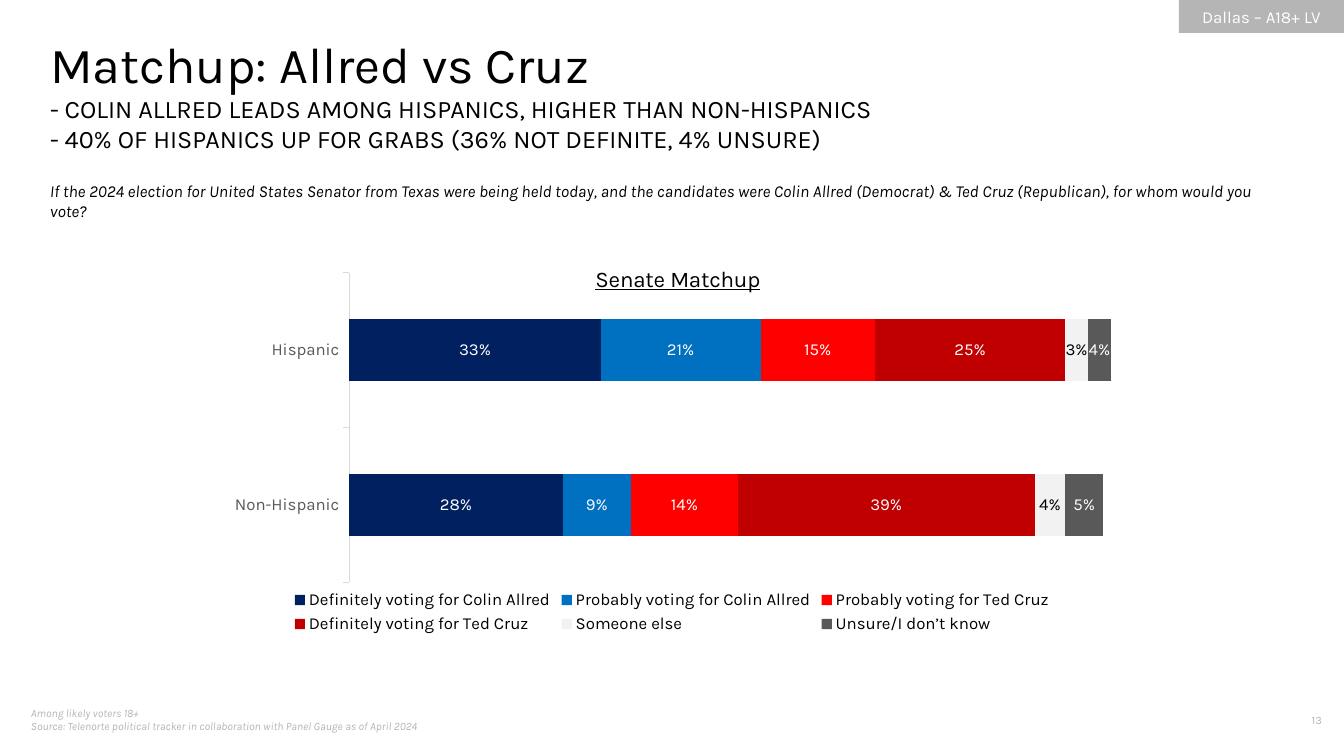
from lxml import etree
from pptx import Presentation
from pptx.chart.data import CategoryChartData
from pptx.dml.color import RGBColor
from pptx.enum.chart import XL_CHART_TYPE, XL_LABEL_POSITION, XL_LEGEND_POSITION, XL_TICK_MARK
from pptx.enum.shapes import MSO_SHAPE
from pptx.enum.text import MSO_ANCHOR, MSO_AUTO_SIZE, PP_ALIGN
from pptx.oxml.ns import qn
from pptx.util import Pt

FONT = "Karla"
BLACK, WHITE, GRAY, DARK = "000000", "FFFFFF", "B5B5B5", "595959"
LEFT, CENTER, RIGHT = PP_ALIGN.LEFT, PP_ALIGN.CENTER, PP_ALIGN.RIGHT
TOP, MIDDLE = MSO_ANCHOR.TOP, MSO_ANCHOR.MIDDLE

GROUPS = ["Hispanic", "Non-Hispanic"]
# answer, share per group, bar colour, label colour
ANSWERS = [
    ("Definitely voting for Colin Allred", (0.33, 0.28), "002060", WHITE),
    ("Probably voting for Colin Allred", (0.21, 0.09), "0070C0", WHITE),
    ("Probably voting for Ted Cruz", (0.15, 0.14), "FF0000", WHITE),
    ("Definitely voting for Ted Cruz", (0.25, 0.39), "C00000", WHITE),
    ("Someone else", (0.03, 0.04), "F2F2F2", BLACK),
    ("Unsure/I don’t know", (0.04, 0.05), DARK, WHITE),
]


def px(n):
    return n * 12192000 // 1344


def rgb(color):
    return RGBColor.from_string(color)


def style(font, size, color, italic=False):
    font.name, font.size, font.italic = FONT, Pt(size), italic
    font.color.rgb = rgb(color)


def write(tf, paragraphs, color, italic=False, align=LEFT, anchor=TOP, inset=None):
    """Fill a frame from (size, lines) pairs, one paragraph each."""
    tf.word_wrap = True
    tf.auto_size = MSO_AUTO_SIZE.NONE
    tf.vertical_anchor = anchor
    if inset is not None:
        tf.margin_left = tf.margin_top = tf.margin_right = tf.margin_bottom = inset
    for i, (size, lines) in enumerate(paragraphs):
        p = tf.add_paragraph() if i else tf.paragraphs[0]
        p.alignment = align
        p.space_before = Pt(0)
        for j, line in enumerate(lines):
            if j:
                p.add_line_break()
            r = p.add_run()
            r.text = line
            style(r.font, size, color, italic)


def add_text(s, box, paragraphs, color, **options):
    tb = s.shapes.add_textbox(*map(px, box))
    write(tb.text_frame, paragraphs, color, **options)


def add_title(s, box, paragraphs):
    title = s.shapes.title
    title.left, title.top, title.width, title.height = map(px, box)
    write(title.text_frame, paragraphs, BLACK, inset=0)


def add_tag(s, box, text):
    sp = s.shapes.add_shape(MSO_SHAPE.RECTANGLE, *map(px, box))
    sp.shadow.inherit = False
    sp.fill.solid()
    sp.fill.fore_color.rgb = rgb(GRAY)
    sp.line.fill.background()
    write(sp.text_frame, [(12, [text])], WHITE, align=CENTER, anchor=MIDDLE)


def place(element, before, **values):
    """Give a chart part a manual layout, in fractions of the chart."""
    for old in element.findall(qn("c:layout")):
        element.remove(old)
    layout = etree.Element(qn("c:layout"))
    manual = etree.SubElement(layout, qn("c:manualLayout"))
    for name, value in values.items():
        etree.SubElement(manual, qn("c:" + name)).set("val", str(value))
    element.find(qn("c:" + before)).addprevious(layout)


def add_matchup_chart(s, box):
    data = CategoryChartData(number_format="0%")
    data.categories = GROUPS
    for name, shares, _, _ in ANSWERS:
        data.add_series(name, shares)
    chart = s.shapes.add_chart(XL_CHART_TYPE.BAR_STACKED, *map(px, box), data).chart
    style(chart.font, 10, BLACK)

    chart.has_title = True
    r = chart.chart_title.text_frame.paragraphs[0].add_run()
    r.text = "Senate Matchup"
    style(r.font, 16, BLACK)
    r.font.bold = False
    r.font.underline = True
    chart.chart_title.include_in_layout = False
    place(chart.chart_title._element, "overlay", xMode="edge", yMode="edge", x=0.41, y=0.05)

    chart.has_legend = True
    chart.legend.position = XL_LEGEND_POSITION.BOTTOM
    chart.legend.include_in_layout = False
    style(chart.legend.font, 12, BLACK)

    axis = chart.category_axis
    axis.reverse_order = True
    axis.major_tick_mark = XL_TICK_MARK.OUTSIDE
    axis.format.line.color.rgb = rgb("D9D9D9")
    axis.format.line.width = Pt(0.75)
    style(axis.tick_labels.font, 12, DARK)
    shares_axis = chart.value_axis
    shares_axis.minimum_scale, shares_axis.maximum_scale = 0, 1
    shares_axis.has_major_gridlines = False
    shares_axis.visible = False

    plot = chart.plots[0]
    plot.gap_width, plot.overlap = 150, 100
    plot.vary_by_categories = False
    for series, (_, _, fill, label_color) in zip(plot.series, ANSWERS):
        series.format.fill.solid()
        series.format.fill.fore_color.rgb = rgb(fill)
        labels = series.data_labels
        labels.show_value = True
        labels.position = XL_LABEL_POSITION.CENTER
        labels.number_format, labels.number_format_is_linked = "0%", False
        style(labels.font, 12, label_color)
    place(plot._element.getparent(), "barChart", layoutTarget="inner",
          xMode="edge", yMode="edge", x=0.14, y=0.08, w=0.85, h=0.78)


def main():
    prs = Presentation()
    prs.slide_width, prs.slide_height = px(1344), px(756)
    s = prs.slides.add_slide(prs.slide_layouts[5])
    add_tag(s, (1179, 0, 165, 33), "Dallas – A18+ LV")
    add_text(s, (21, 701, 515, 40), [(8, [
        "Among likely voters 18+",
        "Source: Telenorte political tracker in collaboration with Panel Gauge as of April 2024",
    ])], GRAY, italic=True)
    add_text(s, (1243, 708, 89, 27), [(8, ["13"])], GRAY, align=RIGHT)
    add_matchup_chart(s, (224, 241, 896, 397))
    add_title(s, (50, 33, 1210, 122), [
        (36, ["Matchup: Allred vs Cruz"]),
        (18, ["- COLIN ALLRED LEADS AMONG HISPANICS, HIGHER THAN NON-HISPANICS",
              "- 40% OF HISPANICS UP FOR GRABS (36% NOT DEFINITE, 4% UNSURE)"]),
    ])
    add_text(s, (50, 181, 1210, 40), [(12, [
        "If the 2024 election for United States Senator from Texas were being held today, "
        "and the candidates were Colin Allred (Democrat) & Ted Cruz (Republican), "
        "for whom would you vote?",
    ])], BLACK, italic=True, inset=0)
    prs.save("out.pptx")


if __name__ == "__main__":
    main()
